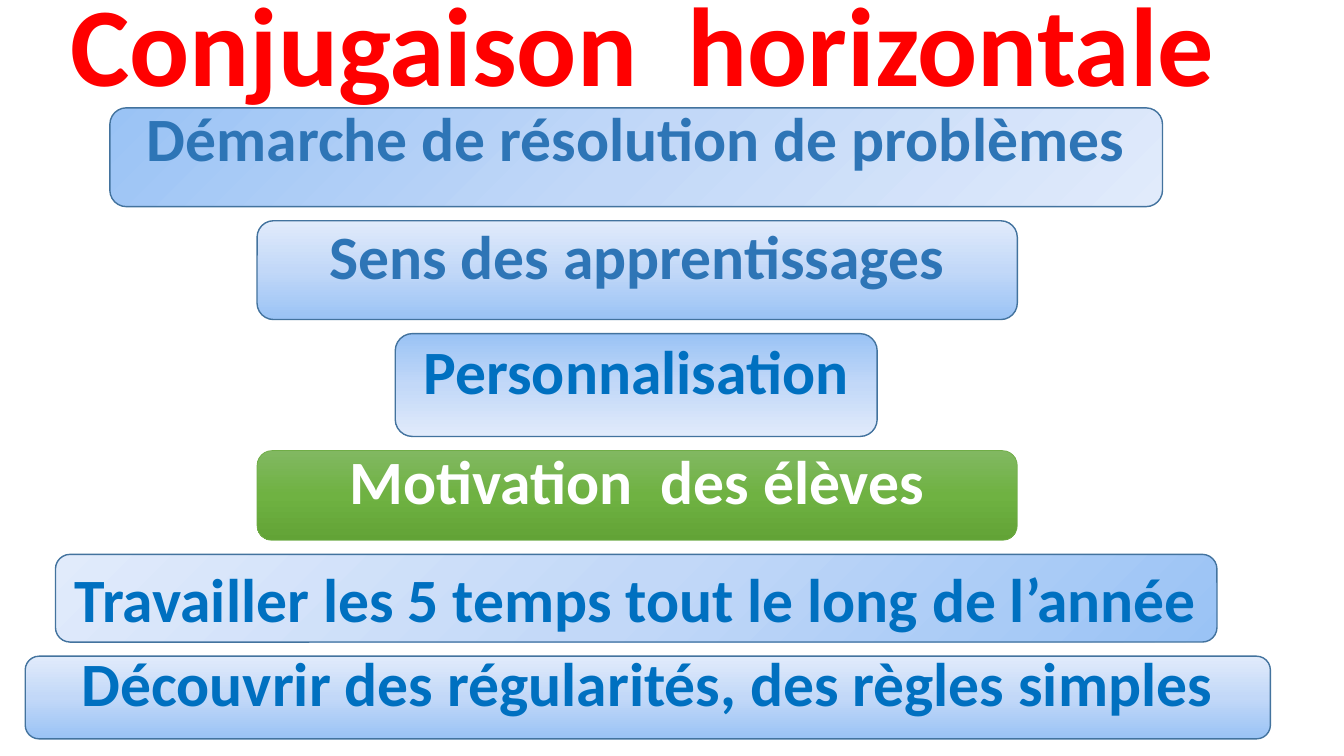
"""Build the slide on horizontal conjugation with its six stacked bars."""
from lxml import etree
from pptx import Presentation
from pptx.dml.color import RGBColor
from pptx.enum import shapes, text
from pptx.oxml.ns import qn
from pptx.util import Inches, Pt

RED = RGBColor(0xFF, 0x00, 0x00)
WHITE = RGBColor(0xFF, 0xFF, 0xFF)
STEEL = RGBColor(0x2E, 0x75, 0xB6)
BLUE = RGBColor(0x00, 0x70, 0xC0)
BLUE_EDGE = RGBColor(0x43, 0x73, 0x9E)
GREEN_EDGE = RGBColor(0x70, 0xAD, 0x47)
BLUE_BLEND = [RGBColor(0x9A, 0xC3, 0xF5), RGBColor(0xC2, 0xD8, 0xF8), RGBColor(0xE1, 0xEB, 0xFB)]
GREEN_BLEND = [RGBColor(0x81, 0xB8, 0x61), RGBColor(0x6F, 0xB2, 0x42), RGBColor(0x62, 0xA3, 0x36)]
BLUE_STYLE = (BLUE_BLEND, BLUE_EDGE, 1)
GREEN_STYLE = (GREEN_BLEND, GREEN_EDGE, 0.5)
PROCESS = shapes.MSO_SHAPE.FLOWCHART_ALTERNATE_PROCESS
ROUNDED = shapes.MSO_SHAPE.ROUNDED_RECTANGLE

TITLE = "Conjugaison  horizontale"
FONT = "Calibri"
FIRST_TOP = 1.07
GAP = 0.14
INSET = 0.05

# label, outline, left, width, height, clockwise angle, style, text colour, lift
BARS = [
    ("Démarche de résolution de problèmes", PROCESS, 1.09, 10.44, 0.98, 45, BLUE_STYLE, STEEL, 0.4),
    ("Sens des apprentissages", PROCESS, 2.55, 7.54, 0.98, 270, BLUE_STYLE, STEEL, 0.3),
    ("Personnalisation", ROUNDED, 3.92, 4.78, 1.02, 90, BLUE_STYLE, BLUE, 0.3),
    ("Motivation  des élèves", ROUNDED, 2.55, 7.54, 0.89, 90, GREEN_STYLE, WHITE, 0.3),
    ("Travailler les 5 temps tout le long de l’année", PROCESS, 0.55, 11.52, 0.87, 225, BLUE_STYLE, BLUE, 0),
    ("Découvrir des régularités, des règles simples", PROCESS, 0.25, 12.35, 0.82, 270, BLUE_STYLE, BLUE, 0.3),
]


def write(frame, words, size, color, align):
    para = frame.paragraphs[0]
    para.text = words
    para.alignment = align
    para.font.name = FONT
    para.font.size = Pt(size)
    para.font.bold = True
    para.font.color.rgb = color


def blend(shape, colors, clockwise):
    shape.fill.gradient()
    shape.fill.gradient_angle = 360 - clockwise
    stops = shape.element.spPr.find(qn("a:gradFill")).find(qn("a:gsLst"))
    for stop in list(stops):
        stops.remove(stop)
    for index, color in enumerate(colors):
        stop = etree.SubElement(stops, qn("a:gs"), pos=str(index * 50000))
        etree.SubElement(stop, qn("a:srgbClr"), val=str(color))


def add_bar(page, top, bar):
    label, outline, left, width, height, angle, style, color, lift = bar
    colors, edge, weight = style
    box = page.shapes.add_shape(outline, Inches(left), Inches(top), Inches(width), Inches(height))
    box.shadow.inherit = False
    blend(box, colors, angle)
    box.line.color.rgb = edge
    box.line.width = Pt(weight)
    frame = box.text_frame
    frame.word_wrap = True
    frame.vertical_anchor = text.MSO_ANCHOR.MIDDLE
    frame.margin_bottom = Inches(INSET + lift)
    write(frame, label, 44, color, text.PP_ALIGN.CENTER)
    return top + height + GAP


def main():
    deck = Presentation()
    deck.slide_width, deck.slide_height = Inches(13.33), Inches(7.5)
    page = deck.slides.add_slide(deck.slide_layouts[6])
    title = page.shapes.add_textbox(Inches(0.6), Inches(-0.3), Inches(11.66), Inches(1.45))
    title.text_frame.word_wrap = False
    title.text_frame.auto_size = text.MSO_AUTO_SIZE.SHAPE_TO_FIT_TEXT
    write(title.text_frame, TITLE, 80, RED, text.PP_ALIGN.LEFT)
    top = FIRST_TOP
    for bar in BARS:
        top = add_bar(page, top, bar)
    deck.save("out.pptx")


if __name__ == "__main__":
    main()
